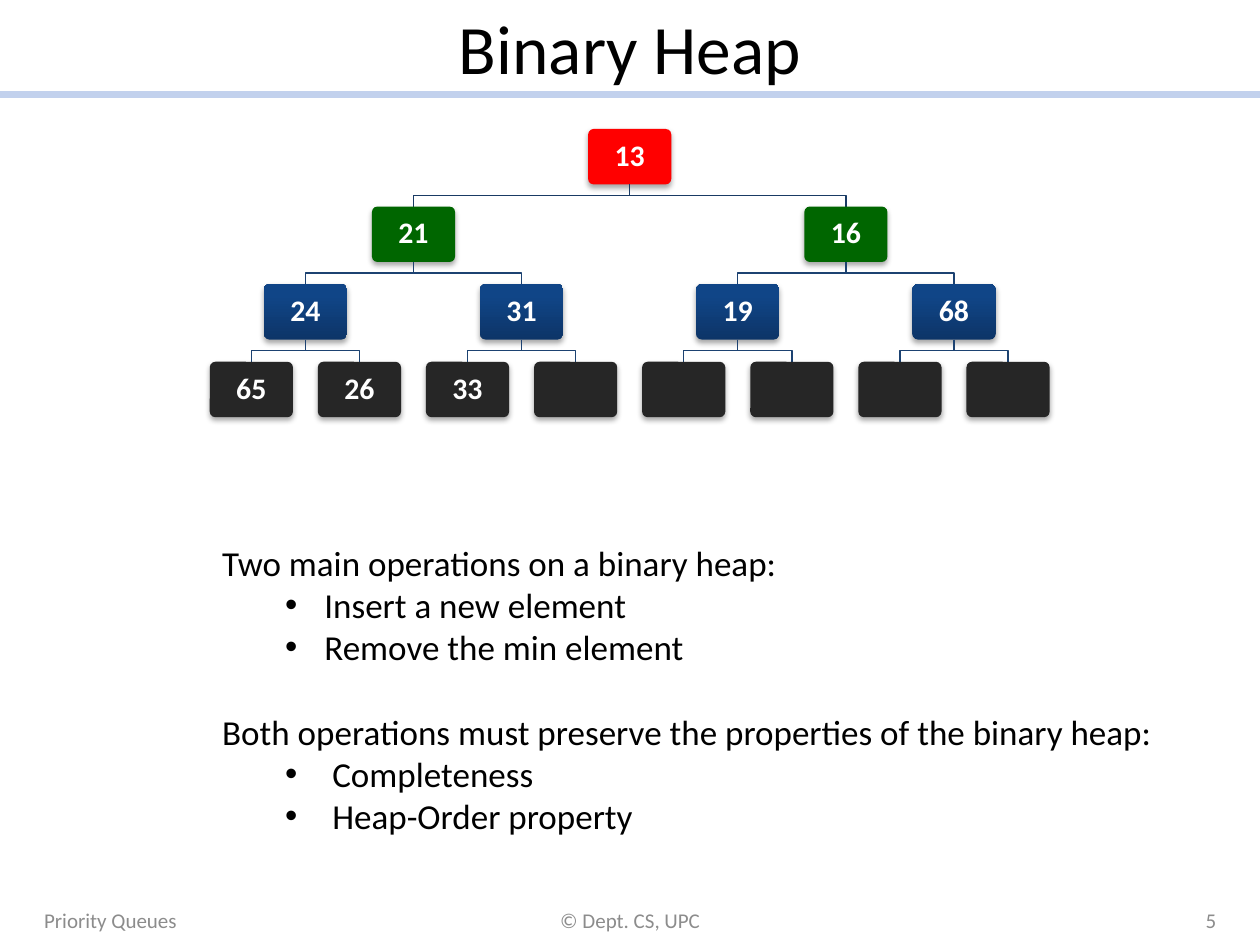
from lxml.etree import SubElement
from pptx import Presentation
from pptx.dml.color import RGBColor
from pptx.enum.shapes import MSO_CONNECTOR, MSO_SHAPE
from pptx.enum.text import MSO_ANCHOR, PP_ALIGN
from pptx.oxml.ns import qn
from pptx.util import Cm, Pt

FONT = "Calibri"
COLORS = {
    "text": "000000",
    "footer": "8C8C8C",
    "rule": "C2D1ED",
    "node_text": "FFFFFF",
    "root": "FF0000",
    "children": "006600",
    "inner_dark": "0D3568",
    "inner_light": "104587",
    "leaf": "262626",
    "root_link": "193A64",
    "link": "1C4271",
}
LEVELS = [
    ["13"],
    ["21", "16"],
    ["24", "31", "19", "68"],
    ["65", "26", "33", "", "", "", "", ""],
]
LEVEL_FILLS = [("root",), ("children",), ("inner_dark", "inner_light"), ("leaf",)]
OPERATIONS = (
    "Two main operations on a binary heap:",
    ["Insert a new element", "Remove the min element"],
    2.06, 0.79, 0,
)
PROPERTIES = (
    "Both operations must preserve the properties of the binary heap:",
    ["Completeness", "Heap-Order property"],
    2.22, 0.95, 24.4,
)


def rgb(name):
    """Return the named colour."""
    return RGBColor.from_string(COLORS[name])


def add_text(paragraph, text, size, color, bold=False):
    """Add one styled run to a paragraph."""
    run = paragraph.add_run()
    run.text = text
    run.font.name = FONT
    run.font.size = Pt(size)
    run.font.bold = bold
    run.font.color.rgb = rgb(color)


def add_frame(slide, left, top, width, height, anchor=MSO_ANCHOR.MIDDLE):
    """Add a wrapping text box and return its text frame."""
    frame = slide.shapes.add_textbox(Cm(left), Cm(top), Cm(width), Cm(height)).text_frame
    frame.word_wrap = True
    frame.vertical_anchor = anchor
    return frame


def add_header(slide, left, top, width, height):
    """Place the centred title and the rule below it."""
    base = Cm(top + height)
    rule = slide.shapes.add_connector(
        MSO_CONNECTOR.STRAIGHT, Cm(left), base, Cm(left + width), base)
    rule.line.color.rgb = rgb("rule")
    rule.line.width = Pt(4)
    SubElement(rule._element.spPr, qn("a:effectLst"))
    title = add_frame(slide, left + 1.27, top, width - 2.54, height).paragraphs[0]
    title.alignment = PP_ALIGN.CENTER
    add_text(title, "Binary Heap", 39.6, "text")


def add_footer(slide, left, top, width, height):
    """Place topic, copyright and page number along the bottom."""
    side, middle = 5.92, 8.04
    parts = [
        ("Priority Queues", left, side, PP_ALIGN.LEFT),
        ("© Dept. CS, UPC", left + (width - middle) / 2, middle, PP_ALIGN.CENTER),
        ("5", left + width - side, side, PP_ALIGN.RIGHT),
    ]
    for text, part_left, part_width, alignment in parts:
        paragraph = add_frame(slide, part_left, top, part_width, height).paragraphs[0]
        paragraph.alignment = alignment
        add_text(paragraph, text, 12, "footer")


def add_shadow(node):
    """Give a node a soft shadow straight below it."""
    node.shadow.inherit = False
    effects = node._element.spPr.find(qn("a:effectLst"))
    shadow = SubElement(effects, qn("a:outerShdw"), blurRad="40000", dist="23000",
                        dir="5400000", rotWithShape="0")
    black = SubElement(shadow, qn("a:srgbClr"), val="000000")
    SubElement(black, qn("a:alpha"), val="35000")


def add_node(slide, center, top, width, height, key, fills):
    """Draw one heap node with its key."""
    node = slide.shapes.add_shape(
        MSO_SHAPE.ROUNDED_RECTANGLE, Cm(center - width / 2), Cm(top), Cm(width), Cm(height))
    node.adjustments[0] = 0.1
    node.line.fill.background()
    if len(fills) == 1:
        node.fill.solid()
        node.fill.fore_color.rgb = rgb(fills[0])
    else:
        node.fill.gradient()
        node.fill.gradient_angle = 90
        for stop, position, name in zip(node.fill.gradient_stops, (0, 0.8), fills):
            stop.position = position
            stop.color.rgb = rgb(name)
    add_shadow(node)
    if key:
        frame = node.text_frame
        frame.margin_left = frame.margin_right = Cm(0.18)
        frame.margin_top = frame.margin_bottom = Cm(0.18)
        frame.vertical_anchor = MSO_ANCHOR.MIDDLE
        paragraph = frame.paragraphs[0]
        paragraph.alignment = PP_ALIGN.CENTER
        paragraph.line_spacing = 0.9
        add_text(paragraph, key, 17, "node_text", bold=True)


def add_link(slide, parent, child, top, bottom, color):
    """Draw the elbow line from a parent down to a child."""
    middle = (top + bottom) / 2
    builder = slide.shapes.build_freeform(Cm(parent), Cm(top))
    corners = [(parent, middle), (child, middle), (child, bottom)]
    builder.add_line_segments([(Cm(x), Cm(y)) for x, y in corners], close=False)
    link = builder.convert_to_shape()
    link.fill.background()
    link.line.color.rgb = rgb(color)
    link.line.width = Pt(0.75)
    link.shadow.inherit = False


def add_heap(slide, left, top, width, height):
    """Draw the heap as a tree filling the given box."""
    leaves = len(LEVELS[-1])
    node_width = width / (leaves + 0.3 * (leaves - 1))
    node_height = height / (1 + 1.4 * (len(LEVELS) - 1))
    parents = []
    for depth, keys in enumerate(LEVELS):
        level_top = top + 1.4 * node_height * depth
        span = leaves / len(keys)
        centers = [left + node_width / 2 + 1.3 * node_width * ((i + 0.5) * span - 0.5)
                   for i in range(len(keys))]
        for i, (key, center) in enumerate(zip(keys, centers)):
            if parents:
                add_link(slide, parents[i // 2], center, level_top - 0.4 * node_height,
                         level_top, "root_link" if depth == 1 else "link")
            add_node(slide, center, level_top, node_width, node_height, key,
                     LEVEL_FILLS[depth])
        parents = centers


def add_bullet(paragraph, margin, hanging):
    """Turn a paragraph into a bulleted one with a hanging indent."""
    properties = paragraph._p.get_or_add_pPr()
    properties.set("marL", str(Cm(margin)))
    properties.set("indent", str(-Cm(hanging)))
    SubElement(properties, qn("a:buFont"), typeface="Arial")
    SubElement(properties, qn("a:buChar"), char="•")


def add_summary(slide, left, top, width, height):
    """Place the statements and their bulleted points."""
    frame = add_frame(slide, left, top, width, height, MSO_ANCHOR.TOP)
    paragraph = frame.paragraphs[0]
    for statement, points, margin, hanging, space in (OPERATIONS, PROPERTIES):
        if paragraph.runs:
            paragraph = frame.add_paragraph()
        paragraph.space_before = Pt(space)
        add_text(paragraph, statement, 20, "text")
        for point in points:
            paragraph = frame.add_paragraph()
            paragraph.level = 1
            add_bullet(paragraph, margin, hanging)
            add_text(paragraph, point, 20, "text")


def main():
    """Build the slide and save it."""
    presentation = Presentation()
    presentation.slide_width, presentation.slide_height = Cm(25.4), Cm(19.05)
    slide = presentation.slides.add_slide(presentation.slide_layouts[6])
    add_header(slide, 0, 0, 25.4, 1.9)
    add_heap(slide, 4.23, 2.6, 16.93, 5.81)
    add_summary(slide, 4.23, 10.8, 19.43, 6.25)
    add_footer(slide, 0.64, 18.03, 24.13, 1.02)
    presentation.save("out.pptx")


if __name__ == "__main__":
    main()
